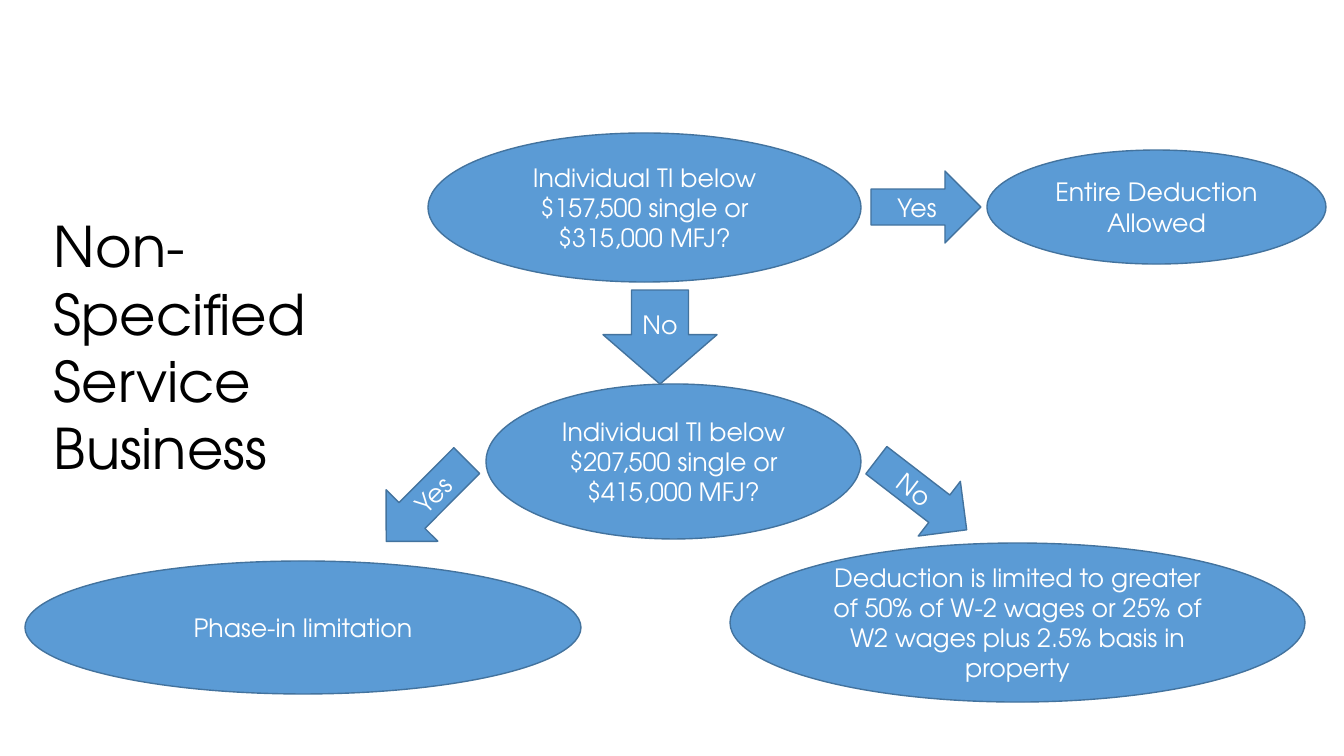
from pptx import Presentation
from pptx.dml.color import RGBColor
from pptx.enum.shapes import MSO_SHAPE
from pptx.enum.text import MSO_ANCHOR, MSO_AUTO_SIZE, PP_ALIGN
from pptx.util import Pt

PX = 914400 / 100.8  # EMU per px

THEME = {
    "font": "TeX Gyre Adventor",
    "fill": RGBColor(0x5B, 0x9B, 0xD5),
    "line": RGBColor(0x43, 0x73, 0x9E),
    "on_fill": RGBColor(0xFF, 0xFF, 0xFF),
    "title": RGBColor(0x00, 0x00, 0x00),
    "body_size": Pt(18),
    "title_size": Pt(40),
}


def px(*lengths):
    return [round(length * PX) for length in lengths]


def write(frame, text, size, color, align):
    frame.word_wrap = True
    frame.text = text
    paragraph = frame.paragraphs[0]
    paragraph.alignment = align
    font = paragraph.runs[0].font
    font.name = THEME["font"]
    font.size = size
    font.color.rgb = color


prs = Presentation()
prs.slide_width, prs.slide_height = px(1344, 756)
slide = prs.slides.add_slide(prs.slide_layouts[6])

# Decision flow: kind, box in px, rotation, text direction, text
OVAL, ARROW = MSO_SHAPE.OVAL, MSO_SHAPE.DOWN_ARROW
flow = [
    (OVAL, (428, 133, 433, 149), 0, None,
     "Individual TI below $157,500 single or $315,000 MFJ?"),
    (ARROW, (890, 152, 72, 110), 270, "vert", "Yes"),
    (ARROW, (603, 290, 114, 94), 0, None, "No"),
    (OVAL, (987, 150, 339, 114), 0, None, "Entire Deduction Allowed"),
    (OVAL, (486, 384, 375, 155), 0, None,
     "Individual TI below $207,500 single or $415,000 MFJ?"),
    (ARROW, (390, 444, 73, 114), 44.9, "vert270", "Yes"),
    (ARROW, (887, 438, 69, 114), 307.6, "vert", "No"),
    (OVAL, (730, 543, 575, 159), 0, None,
     "Deduction is limited to greater of 50% of W-2 wages or 25% of "
     "W2 wages plus 2.5% basis in property"),
    (OVAL, (25, 561, 556, 133), 0, None, "Phase-in limitation"),
]
for kind, box, rotation, direction, text in flow:
    step = slide.shapes.add_shape(kind, *px(*box))
    step.rotation = rotation
    step.shadow.inherit = False
    step.fill.solid()
    step.fill.fore_color.rgb = THEME["fill"]
    step.line.color.rgb = THEME["line"]
    step.line.width = Pt(1)
    if kind == ARROW and not rotation:
        step.adjustments[1] = 0.525
    step.text_frame.vertical_anchor = MSO_ANCHOR.MIDDLE
    write(step.text_frame, text, THEME["body_size"], THEME["on_fill"],
          PP_ALIGN.CENTER)
    if direction:
        step.element.txBody.bodyPr.set("vert", direction)

# Title
title = slide.shapes.add_textbox(*px(44, 207, 340, 281))
write(title.text_frame, "Non-Specified Service Business",
      THEME["title_size"], THEME["title"], PP_ALIGN.LEFT)
title.text_frame.auto_size = MSO_AUTO_SIZE.SHAPE_TO_FIT_TEXT

prs.save("out.pptx")
